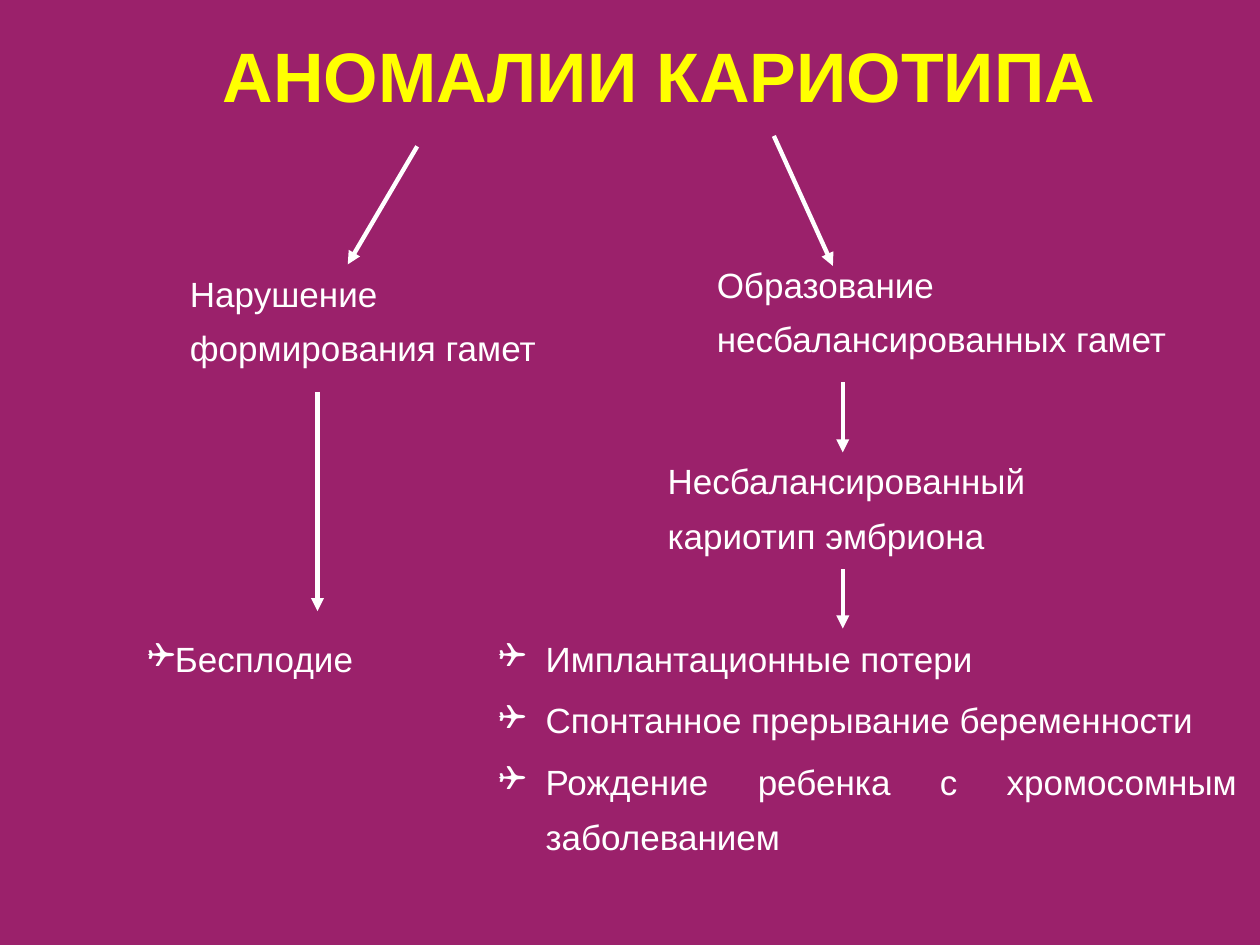
from dataclasses import dataclass

import pptx
import pptx.dml.color
import pptx.enum.shapes
import pptx.enum.text
import pptx.oxml.ns
import pptx.util
from lxml import etree
from pptx.util import Cm

RGB = pptx.dml.color.RGBColor
ALIGN = pptx.enum.text.PP_ALIGN
qn = pptx.oxml.ns.qn


@dataclass(frozen=True)
class Theme:
    background: RGB = RGB(0x9B, 0x21, 0x6B)
    title: RGB = RGB(0xFF, 0xFF, 0x00)
    ink: RGB = RGB(0xFF, 0xFF, 0xFF)
    font: str = "Arial"
    title_size: int = 40
    body_size: int = 20
    arrow_width: float = 2.5


theme = Theme()


def add_text(page, place, lines, size, color, align):
    """Add a wrapped text box with one paragraph per line and return it."""
    box = page.shapes.add_textbox(*(Cm(length) for length in place))
    frame = box.text_frame
    frame.word_wrap = True
    frame.text = "\n".join(lines)
    for para in frame.paragraphs:
        para.alignment = align
        para.space_before = pptx.util.Pt(size * 0.2)
        para.font.name = theme.font
        para.font.size = pptx.util.Pt(size)
        para.font.color.rgb = color
    return box


deck = pptx.Presentation()
deck.slide_width, deck.slide_height = Cm(25.4), Cm(19.05)
page = deck.slides.add_slide(deck.slide_layouts[6])
page.background.fill.solid()
page.background.fill.fore_color.rgb = theme.background

# Title, centred slightly right of the middle of the page
title = add_text(page, (0.2, 0, 25, 3), ["АНОМАЛИИ КАРИОТИПА"],
                 theme.title_size, theme.title, ALIGN.CENTER)
title.text_frame.vertical_anchor = pptx.enum.text.MSO_ANCHOR.MIDDLE
title_para = title.text_frame.paragraphs[0]
title_para.font.bold = True
title_para._p.get_or_add_pPr().set("marL", str(Cm(1.17)))

# Stages and outcomes: place, lines, hanging indent (None means no bullets)
blocks = [
    ((3.58, 5.11, 8.13, 3), ["Нарушение формирования гамет"], None),
    ((14.2, 4.93, 10.21, 2.79), ["Образование несбалансированных гамет"], None),
    ((13.21, 8.89, 10.39, 1.8), ["Несбалансированный кариотип эмбриона"], None),
    ((2.72, 12.47, 8, 1.8), ["Бесплодие"], 0),
    ((9.8, 12.47, 15.39, 3.81), [
        "Имплантационные потери",
        "Спонтанное прерывание беременности",
        "Рождение ребенка с хромосомным заболеванием",
    ], 0.95),
]
for place, lines, hanging in blocks:
    box = add_text(page, place, lines, theme.body_size, theme.ink, ALIGN.JUSTIFY)
    for para in box.text_frame.paragraphs:
        para.line_spacing = 1.3
        if hanging is not None:
            props = para._p.get_or_add_pPr()
            props.set("marL", str(Cm(hanging)))
            props.set("indent", str(-Cm(hanging)))
            etree.SubElement(props, qn("a:buFont"), typeface="Wingdings")
            etree.SubElement(props, qn("a:buChar"), char="❑")
            # defRPr must close the paragraph properties
            for defaults in props.findall(qn("a:defRPr")):
                props.append(defaults)

# Arrows: start x, start y, end x, end y
arrows = [
    (8.41, 2.95, 7.01, 5.33),
    (15.6, 2.74, 16.79, 5.36),
    (16.99, 7.7, 16.99, 9.12),
    (16.99, 11.48, 16.99, 12.67),
    (6.4, 7.9, 6.4, 12.32),
]
for ends in arrows:
    arrow = page.shapes.add_connector(pptx.enum.shapes.MSO_CONNECTOR.STRAIGHT,
                                      *(Cm(length) for length in ends))
    arrow.line.color.rgb = theme.ink
    arrow.line.width = pptx.util.Pt(theme.arrow_width)
    etree.SubElement(arrow.line._get_or_add_ln(), qn("a:tailEnd"), type="triangle")
    etree.SubElement(arrow._element.spPr, qn("a:effectLst"))

deck.save("out.pptx")
